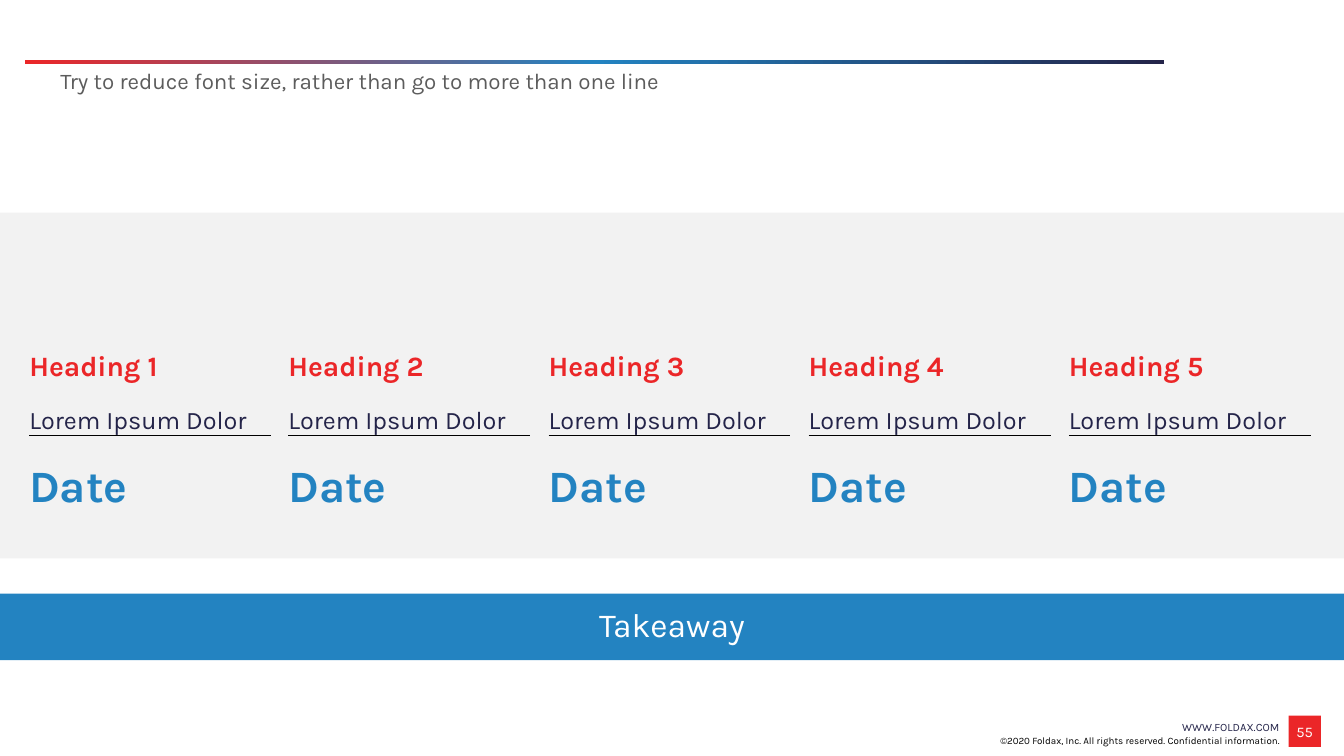
from copy import deepcopy

from lxml import etree
from pptx import Presentation
from pptx.dml.color import RGBColor
from pptx.enum.shapes import MSO_SHAPE
from pptx.enum.text import MSO_ANCHOR as ANCHOR, PP_ALIGN as ALIGN
from pptx.oxml.ns import qn
from pptx.util import Pt

PX = 9144  # 100 px to the inch
W, H = 1333, 750
RED, BLUE, NAVY, WHITE, BLACK = "EB2628", "2383C1", "242449", "FFFFFF", "000000"
NO_STYLE = "{2D5ABB26-0587-4C30-8999-92F81FD0307C}"


def rgb(color):
    return RGBColor.from_string(color)


def put_text(tf, text, size, color, bold=False, **paragraph_format):
    """Write one formatted paragraph into a text frame."""
    tf.word_wrap = True
    p = tf.paragraphs[0]
    for name, value in paragraph_format.items():
        setattr(p, name, value)
    r = p.add_run()
    r.text = text
    for name, value in dict(name="Karla", size=Pt(size), bold=bold).items():
        setattr(r.font, name, value)
    r.font.color.rgb = rgb(color)


prs = Presentation()
prs.slide_width, prs.slide_height = W * PX, H * PX
s = prs.slides.add_slide(prs.slide_layouts[6])

# Rule, grey panel, takeaway bar and page number
blocks = {}
for name, box, color in [
    ("rule", (25, 60, 1130, 4), None),
    ("panel", (0, 211, W, 343), "F2F2F2"),
    ("takeaway", (0, 589, W, 66), BLUE),
    ("page", (1278, 710, 32, 31), RED),
]:
    sp = s.shapes.add_shape(MSO_SHAPE.RECTANGLE, *(v * PX for v in box))
    sp.shadow.inherit = False
    sp.line.fill.background()
    if color:
        sp.fill.solid()
        sp.fill.fore_color.rgb = rgb(color)
    sp.text_frame.vertical_anchor = ANCHOR.MIDDLE
    blocks[name] = sp

fill = blocks["rule"].fill
fill.gradient()
fill.gradient_angle = 0
stop_list = next(blocks["rule"]._element.iter(qn("a:gsLst")))
stop_list.append(deepcopy(stop_list[0]))
for stop, position, color in zip(fill.gradient_stops, (0, 0.5, 1), (RED, BLUE, NAVY)):
    stop.position = position
    stop.color.rgb = rgb(color)

put_text(blocks["takeaway"].text_frame, "Takeaway", 24, WHITE,
         alignment=ALIGN.CENTER, line_spacing=0.9)
page = blocks["page"].text_frame
for side in ("left", "right", "top", "bottom"):
    setattr(page, f"margin_{side}", 2 * PX)
put_text(page, "55", 10.5, WHITE, alignment=ALIGN.CENTER)

# Subtitle and footer
for box, anchor, text, size, color, align in [
    ((50, 62, 1082, 35), ANCHOR.TOP,
     "Try to reduce font size, rather than go to more than one line", 16, "5C5C5C", ALIGN.LEFT),
    ((1045, 704, 234, 34), ANCHOR.MIDDLE, "WWW.FOLDAX.COM", 8, NAVY, ALIGN.RIGHT),
    ((829, 705, 450, 40), ANCHOR.BOTTOM,
     "©2020 Foldax, Inc. All rights reserved. Confidential information.", 7, BLACK, ALIGN.RIGHT),
]:
    tf = s.shapes.add_textbox(*(v * PX for v in box)).text_frame
    tf.vertical_anchor = anchor
    put_text(tf, text, size, color, alignment=align)

# Five timeline columns, one table each
FIRST_LEFT, LAST_LEFT, COLUMNS = 29, 1060, 5
for i in range(COLUMNS):
    left = FIRST_LEFT + (LAST_LEFT - FIRST_LEFT) * i // (COLUMNS - 1)
    table = s.shapes.add_table(3, 1, left * PX, 261 * PX, 240 * PX, 241 * PX).table
    table.first_row = table.horz_banding = False
    next(table._tbl.iter(qn("a:tableStyleId"))).text = NO_STYLE
    for row, (height, anchor, text, size, color, bold, after, edge) in enumerate([
        (120, ANCHOR.BOTTOM, f"Heading {i + 1}", 20, RED, True, 6, None),
        (51, ANCHOR.BOTTOM, "Lorem Ipsum Dolor", 18, NAVY, False, 0, "a:lnB"),
        (70, ANCHOR.TOP, "Date", 32, BLUE, True, 12, "a:lnT"),
    ]):
        table.rows[row].height = height * PX
        cell = table.cell(row, 0)
        cell.fill.background()
        cell.vertical_anchor = anchor
        for side in ("left", "right", "top", "bottom"):
            setattr(cell, f"margin_{side}", 0)
        put_text(cell.text_frame, text, size, color, bold,
                 line_spacing=1.5, space_after=Pt(after))
        if edge:
            ln = etree.Element(qn(edge), w=str(Pt(1)))
            solid = etree.SubElement(ln, qn("a:solidFill"))
            etree.SubElement(solid, qn("a:srgbClr"), val=BLACK)
            cell._tc.tcPr.insert(0, ln)

prs.save("out.pptx")
